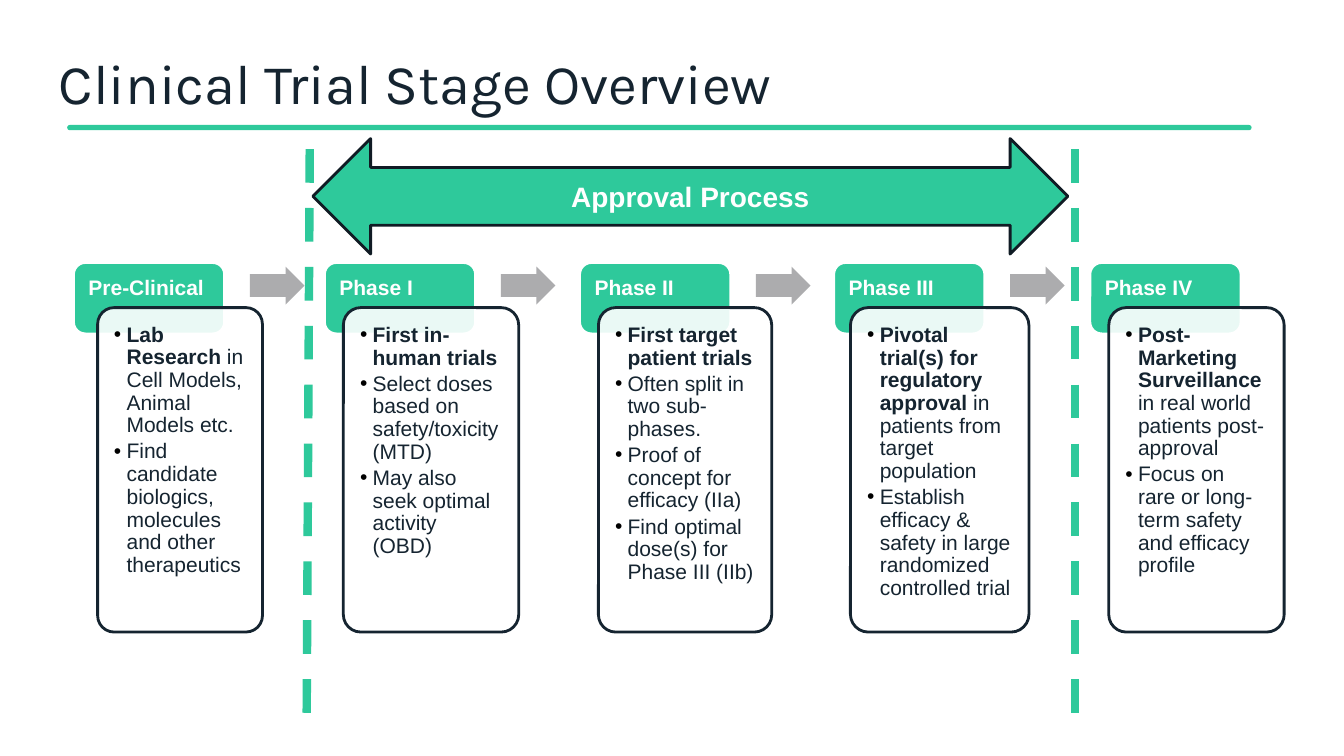
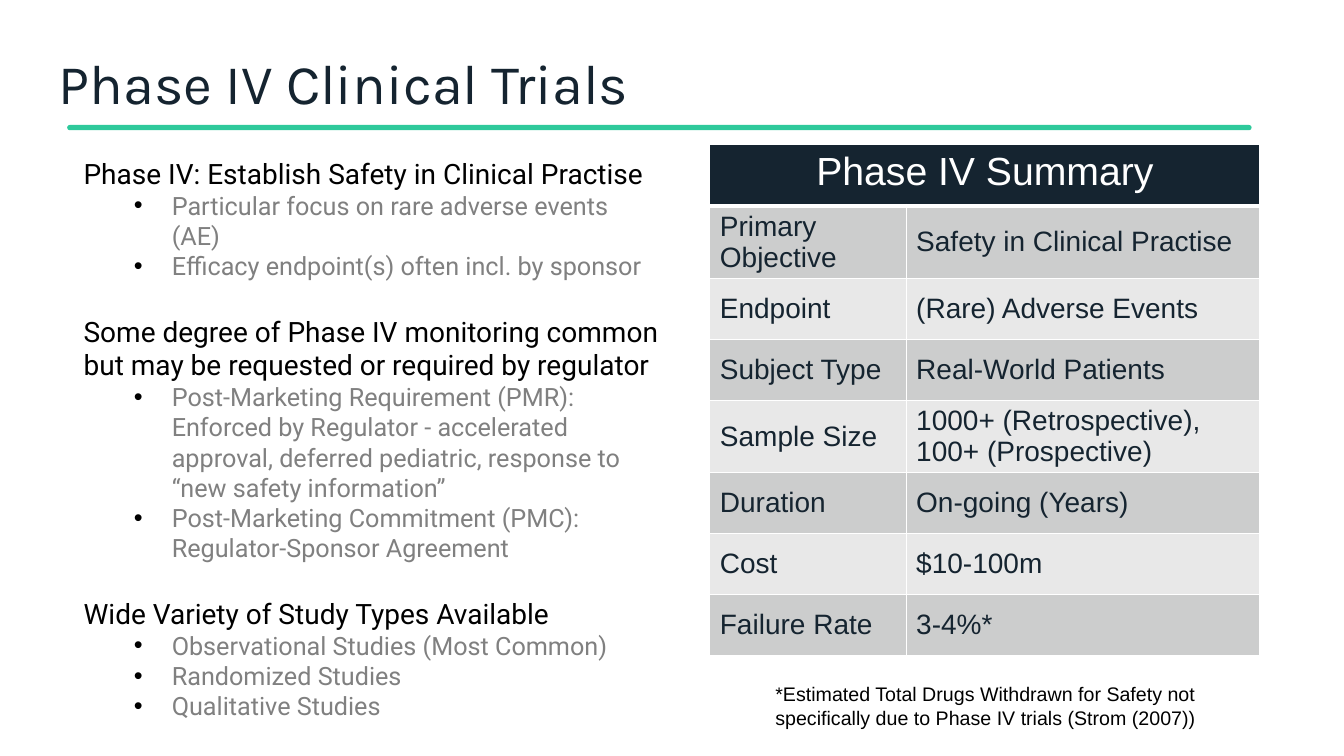
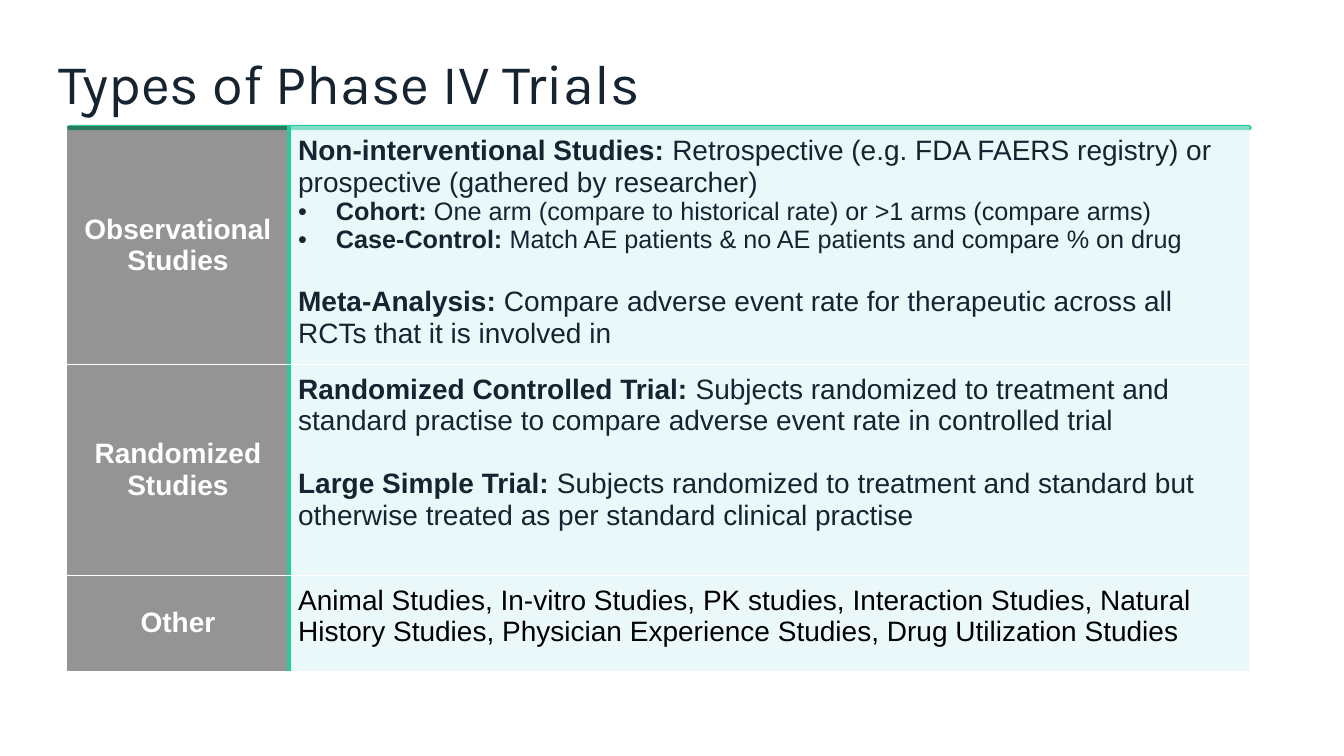
from dataclasses import dataclass

from lxml.etree import SubElement
from pptx import Presentation
from pptx.dml.color import RGBColor
from pptx.enum.dml import MSO_LINE
from pptx.enum.shapes import MSO_CONNECTOR, MSO_SHAPE
from pptx.enum.text import MSO_ANCHOR as Anchor, MSO_AUTO_SIZE as AutoSize, PP_ALIGN as Align
from pptx.oxml.ns import qn
from pptx.util import Pt

PX = 9525


@dataclass(frozen=True)
class Theme:
    green: str = "2EC99B"
    navy: str = "152430"
    outline: str = "101B24"
    white: str = "FFFFFF"
    black: str = "000000"
    gray: str = "808080"
    arrow: str = "ACACAE"
    bands: tuple = ("CCCDCD", "E8E8E8")
    label: str = "262626"
    detail: str = "D6F2F6"
    heading_font: str = "Karla"
    body_font: str = "Roboto"
    font: str = "Arial"
    title: int = 40
    table_title: int = 28
    large: int = 20
    medium: int = 18
    small: int = 15
    note: int = 14


theme = Theme()


def write(frame, text, size, color, font=theme.font, align=Align.LEFT, margin=0, hang=0, bullet=theme.black):
    paragraph = frame.paragraphs[-1]
    if paragraph.runs:
        paragraph = frame.add_paragraph()
    paragraph.alignment = align
    paragraph.space_before = Pt(0)
    bold_text, _, plain_text = text.rpartition("|")
    for part, bold in ((bold_text, True), (plain_text, False)):
        if part:
            run = paragraph.add_run()
            run.text = part
            run.font.size = Pt(size)
            run.font.name = font
            run.font.bold = bold
            run.font.color.rgb = RGBColor.from_string(color)
    properties = paragraph._p.get_or_add_pPr()
    properties.set("marL", str(margin * PX))
    properties.set("indent", str(-hang * PX))
    if hang:
        SubElement(SubElement(properties, qn("a:buClr")), qn("a:srgbClr"), val=bullet)
        SubElement(properties, qn("a:buFont"), typeface=theme.font)
        SubElement(properties, qn("a:buChar"), char="•")
    else:
        SubElement(properties, qn("a:buNone"))
    return paragraph


def draw(slide, kind, left, top, width, height, fill, line=None):
    shape = slide.shapes.add_shape(kind, left * PX, top * PX, width * PX, height * PX)
    shape.shadow.inherit = False
    shape.fill.solid()
    shape.fill.fore_color.rgb = RGBColor.from_string(fill)
    if line:
        shape.line.color.rgb = RGBColor.from_string(line)
        shape.line.width = Pt(2)
    else:
        shape.line.fill.background()
    return shape


presentation = Presentation()
presentation.slide_width = 1280 * PX
presentation.slide_height = 720 * PX
content_layout = presentation.slide_layouts[1]
title_layout = presentation.slide_layouts[5]

slides = []
for layout, heading in (
    (title_layout, "Clinical Trial Stage Overview"),
    (content_layout, "Phase IV Clinical Trials"),
    (title_layout, "Types of Phase IV Trials"),
):
    slide = presentation.slides.add_slide(layout)
    title = slide.shapes.title
    title.left, title.top, title.width, title.height = 56 * PX, 36 * PX, 1167 * PX, 75 * PX
    frame = title.text_frame
    frame.auto_size = AutoSize.NONE
    frame.vertical_anchor = Anchor.BOTTOM
    frame.margin_left = frame.margin_top = frame.margin_right = frame.margin_bottom = 0
    write(frame, heading, theme.title, theme.navy, theme.heading_font).line_spacing = 0.9
    slides.append(slide)
overview, summary, types = slides

rule = draw(overview, MSO_SHAPE.ROUNDED_RECTANGLE, 64, 119, 1128, 5, theme.green)
rule.adjustments[0] = 0.5
rule.element.nvSpPr.cNvPr.set("id", "20")
presentation.slide_master.shapes.element.append(rule.element)

phases = [
    ("Pre-Clinical|", 70, 93, 157, [
        "Lab Research |in Cell Models, Animal Models etc.",
        "Find candidate biologics, molecules and other therapeutics",
    ]),
    ("Phase I|", 309, 327, 167, [
        "First in-human trials|",
        "Select doses based on safety/toxicity (MTD)",
        "May also seek optimal activity (OBD)",
    ]),
    ("Phase II|", 552, 570, 165, [
        "First target patient trials|",
        "Often split in two sub-phases.",
        "Proof of concept for efficacy (IIa)",
        "Find optimal dose(s) for Phase III (IIb)",
    ]),
    ("Phase III|", 794, 810, 170, [
        "Pivotal trial(s) for regulatory approval |in patients from target population",
        "Establish efficacy & safety in large randomized controlled trial",
    ]),
    ("Phase IV|", 1038, 1056, 167, [
        "Post-Marketing Surveillance |in real world patients post-approval",
        "Focus on rare or long-term safety and efficacy profile",
    ]),
]
for name, tab_left, card_left, card_width, points in phases:
    tab = draw(overview, MSO_SHAPE.ROUNDED_RECTANGLE, tab_left, 250, 144, 68, theme.green, theme.white)
    card = draw(overview, MSO_SHAPE.ROUNDED_RECTANGLE, card_left, 293, card_width, 309, theme.white, theme.navy)
    card.adjustments[0] = 0.1
    SubElement(card.element.spPr.find(".//" + qn("a:srgbClr")), qn("a:alpha"), val="90000")
    for frame in (tab.text_frame, card.text_frame):
        frame.word_wrap = True
        frame.vertical_anchor = Anchor.TOP
        frame.margin_left = frame.margin_top = frame.margin_right = frame.margin_bottom = 11 * PX
    write(tab.text_frame, name, theme.small, theme.white).line_spacing = 0.9
    for point in points:
        paragraph = write(card.text_frame, point, theme.small, theme.navy, margin=12, hang=12)
        paragraph.line_spacing = 0.9
        paragraph.space_after = Pt(2.4)

for _, tab_left, *_ in phases[:-1]:
    arrow = draw(overview, MSO_SHAPE.RIGHT_ARROW, tab_left + 168, 254, 52, 36, theme.arrow)
    arrow.adjustments[0] = 0.6

approval = draw(overview, MSO_SHAPE.LEFT_RIGHT_ARROW, 298, 132, 719, 110, theme.green, theme.outline)
write(approval.text_frame, "Approval Process|", theme.large, theme.white, align=Align.CENTER)

for top_x, bottom_x in ((295, 292), (1024, 1024)):
    divider = overview.shapes.add_connector(
        MSO_CONNECTOR.STRAIGHT, top_x * PX, 142 * PX, bottom_x * PX, 700 * PX)
    divider.line.color.rgb = RGBColor.from_string(theme.green)
    divider.line.width = Pt(6)
    divider.line.dash_style = MSO_LINE.DASH
    SubElement(divider.element.spPr, qn("a:effectLst"))

body = summary.placeholders[1]
body.left, body.top, body.width, body.height = 70 * PX, 144 * PX, 569 * PX, 523 * PX
body.text_frame.auto_size = AutoSize.NONE
sections = [
    ("Phase IV: Establish Safety in Clinical Practise", [
        "Particular focus on rare adverse events (AE)",
        "Efficacy endpoint(s) often incl. by sponsor",
    ]),
    ("Some degree of Phase IV monitoring common but may be requested or required by regulator", [
        "Post-Marketing Requirement (PMR): Enforced by Regulator - accelerated approval, "
        "deferred pediatric, response to “new safety information”",
        "Post-Marketing Commitment (PMC): Regulator-Sponsor Agreement",
    ]),
    ("Wide Variety of Study Types Available", [
        "Observational Studies (Most Common)",
        "Randomized Studies",
        "Qualitative Studies",
    ]),
]
for index, (heading, points) in enumerate(sections):
    paragraph = write(body.text_frame, heading, theme.large, theme.black, theme.body_font)
    paragraph.space_before = Pt(24 if index else 0)
    for point in points:
        write(body.text_frame, point, theme.medium, theme.gray, theme.body_font, margin=84, hang=36)

facts = [
    ("Primary Objective", "Safety in Clinical Practise"),
    ("Endpoint", "(Rare) Adverse Events"),
    ("Subject Type", "Real-World Patients"),
    ("Sample Size", "1000+ (Retrospective), 100+ (Prospective)"),
    ("Duration", "On-going (Years)"),
    ("Cost", "$10-100m"),
    ("Failure Rate", "3-4%*"),
]
studies = [
    ("Observational Studies|", 227, theme.navy, [
        ("Non-interventional Studies: |Retrospective (e.g. FDA FAERS registry) or prospective "
         "(gathered by researcher)", False),
        ("Cohort: |One arm (compare to historical rate) or >1 arms (compare arms)", True),
        ("Case-Control: |Match AE patients & no AE patients and compare % on drug", True),
        ("Meta-Analysis: |Compare adverse event rate for therapeutic across all RCTs "
         "that it is involved in", False),
    ]),
    ("Randomized Studies|", 201, theme.navy, [
        ("Randomized Controlled Trial: |Subjects randomized to treatment and standard practise "
         "to compare adverse event rate in controlled trial", False),
        ("Large Simple Trial: |Subjects randomized to treatment and standard but otherwise "
         "treated as per standard clinical practise", False),
    ]),
    ("Other|", 91, theme.black, [
        ("Animal Studies, In-vitro Studies, PK studies, Interaction Studies, Natural History Studies, "
         "Physician Experience Studies, Drug Utilization Studies", False),
    ]),
]

fact_height = 58
fact_table = summary.shapes.add_table(
    len(facts) + 1, 2, 676 * PX, 138 * PX, 524 * PX, fact_height * (len(facts) + 1) * PX).table
study_height = sum(height for _, height, _, _ in studies)
study_table = types.shapes.add_table(
    len(studies), 2, 64 * PX, 120 * PX, 1126 * PX, study_height * PX).table
for table, widths in ((fact_table, (187, 337)), (study_table, (211, 915))):
    table.first_row = table.horz_banding = False
    table._tbl.tblPr[0].text = "{2D5ABB26-0587-4C30-8999-92F81FD0307C}"
    for column, width in zip(table.columns, widths):
        column.width = width * PX

borders = []
thin = (theme.white, 1)
header = fact_table.cell(0, 0)
header.merge(fact_table.cell(0, 1))
header.fill.solid()
header.fill.fore_color.rgb = RGBColor.from_string(theme.navy)
write(header.text_frame, "Phase IV Summary", theme.table_title, theme.white, align=Align.CENTER)
borders.append((header, {"L": thin, "R": thin, "T": thin, "B": (theme.white, 3)}))
for row, texts in enumerate(facts, 1):
    for column, text in enumerate(texts):
        cell = fact_table.cell(row, column)
        cell.vertical_anchor = Anchor.MIDDLE
        cell.fill.solid()
        cell.fill.fore_color.rgb = RGBColor.from_string(theme.bands[(row - 1) % 2])
        write(cell.text_frame, text, theme.large, theme.navy)
        borders.append((cell, dict.fromkeys("LRTB", thin)))

for row, (name, height, color, details) in enumerate(studies):
    study_table.rows[row].height = height * PX
    label, detail = study_table.cell(row, 0), study_table.cell(row, 1)
    for cell, fill, inner_side in ((label, theme.label, "R"), (detail, theme.detail, "L")):
        cell.margin_left = cell.margin_right = cell.margin_top = cell.margin_bottom = 9 * PX
        cell.fill.solid()
        cell.fill.fore_color.rgb = RGBColor.from_string(fill)
        SubElement(cell._tc.tcPr.find(".//" + qn("a:srgbClr")), qn("a:alpha"), val="49000")
        sides = {inner_side: (theme.green, 3)}
        if row > 0:
            sides["T"] = thin
        if row < len(studies) - 1:
            sides["B"] = thin
        borders.append((cell, sides))
    label.vertical_anchor = Anchor.MIDDLE
    write(label.text_frame, name, theme.large, theme.white, align=Align.CENTER)
    for index, (text, listed) in enumerate(details):
        if listed:
            write(detail.text_frame, text, theme.medium, color, margin=36, hang=36, bullet=color)
        else:
            paragraph = write(detail.text_frame, text, theme.large, color)
            paragraph.space_before = Pt(23 if index else 0)

for cell, sides in borders:
    properties = cell._tc.get_or_add_tcPr()
    for position, (side, (color, width)) in enumerate(sides.items()):
        line = SubElement(properties, qn("a:ln" + side), w=str(Pt(width)))
        SubElement(SubElement(line, qn("a:solidFill")), qn("a:srgbClr"), val=color)
        properties.insert(position, line)

note = summary.shapes.add_textbox(729 * PX, 645 * PX, 420 * PX, 55 * PX)
note.text_frame.word_wrap = True
write(note.text_frame,
      "*Estimated Total Drugs Withdrawn for Safety not specifically due to Phase IV trials (Strom (2007))",
      theme.note, theme.black)

presentation.save("out.pptx")
